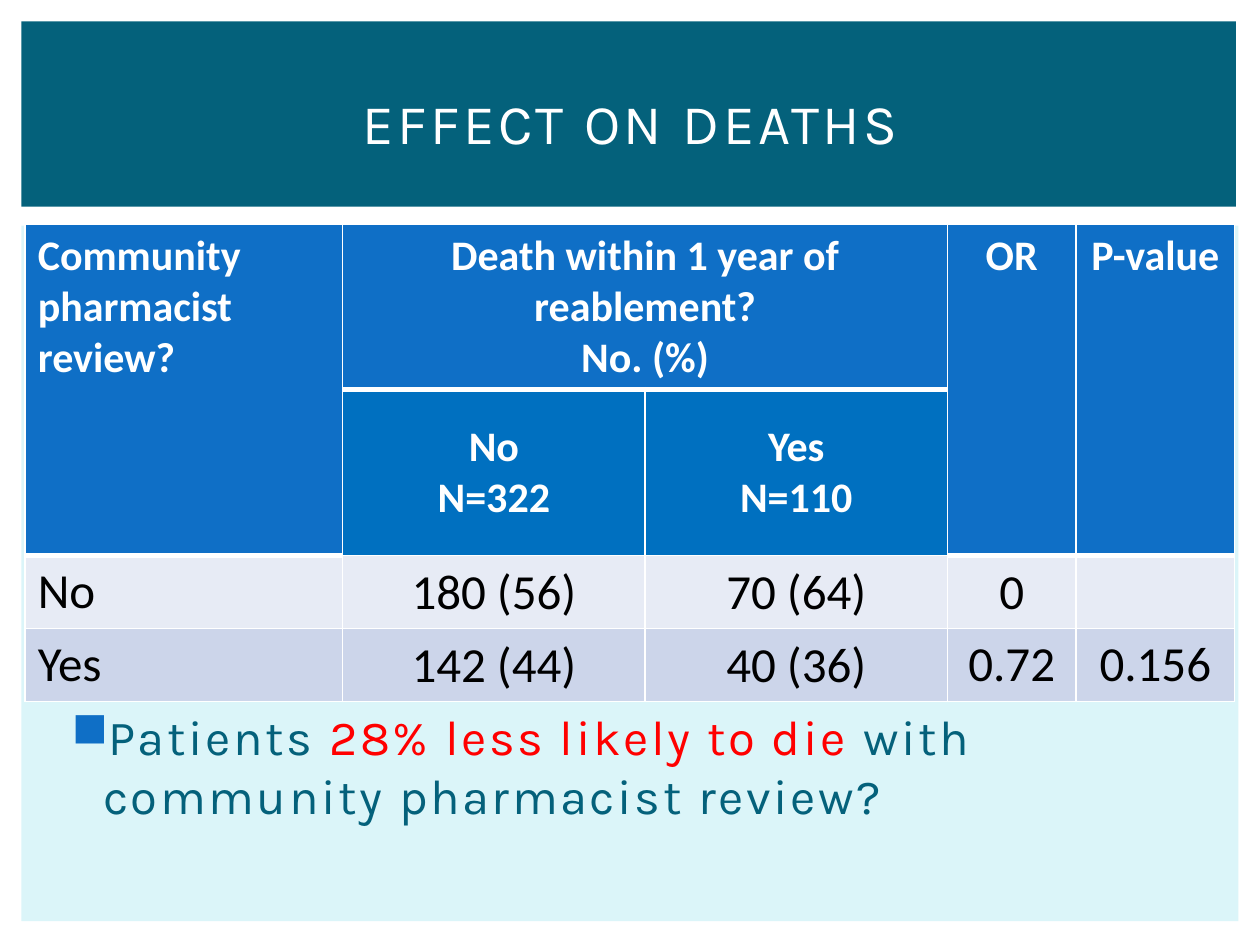
from dataclasses import dataclass

from lxml import etree
from pptx import Presentation
from pptx import util as u
from pptx.dml.color import RGBColor
from pptx.enum import shapes, text
from pptx.oxml.ns import qn

LEFT, CENTER = text.PP_ALIGN.LEFT, text.PP_ALIGN.CENTER
TOP, MIDDLE, BOTTOM = (text.MSO_ANCHOR.TOP, text.MSO_ANCHOR.MIDDLE,
                       text.MSO_ANCHOR.BOTTOM)


@dataclass(frozen=True)
class Theme:
    """Colours, fonts and type sizes of the slide."""
    teal: str = "04617B"
    pale: str = "DBF5F9"
    header: str = "0F6FC6"
    subheader: str = "0070C0"
    bands: tuple = ("E7EBF5", "CCD5EA")
    white: str = "FFFFFF"
    black: str = "000000"
    accent: str = "FF0000"
    display: str = "Karla"
    table: str = "Calibri"
    title_size: int = 32
    body_size: int = 28
    head_size: int = 24


T = Theme()


def write(tf, content, size, color, font, bold=False, align=LEFT, spacing=0):
    """Fill a text frame with paragraphs; each is a string or (text, colour) runs."""
    tf.word_wrap = True
    for i, runs in enumerate(content):
        p = tf.add_paragraph() if i else tf.paragraphs[0]
        p.alignment = align
        for words, tint in [(runs, color)] if isinstance(runs, str) else runs:
            r = p.add_run()
            r.text = words
            r.font.size, r.font.name, r.font.bold = u.Pt(size), font, bold
            r.font.color.rgb = RGBColor.from_string(tint)
            if spacing:
                r._r.get_or_add_rPr().set("spc", str(int(spacing * 100)))


def add_panel(s, box, color):
    """Draw a plain filled rectangle."""
    sp = s.shapes.add_shape(shapes.MSO_SHAPE.RECTANGLE, *map(u.Inches, box))
    sp.shadow.inherit = False
    sp.fill.solid()
    sp.fill.fore_color.rgb = RGBColor.from_string(color)
    sp.line.fill.background()


def add_title(s, box, words):
    """Draw the title band with its centred heading."""
    x, y, w, h = box
    add_panel(s, box, T.teal)
    tf = s.shapes.add_textbox(*map(u.Inches, (x + 0.25, y + 0.22, w - 0.47, h - 0.32))).text_frame
    tf.vertical_anchor = MIDDLE
    write(tf, [words], T.title_size, T.white, T.display, align=CENTER, spacing=2)


def add_bullet(s, box, runs):
    """Place one square-bulleted paragraph."""
    tf = s.shapes.add_textbox(*map(u.Inches, box)).text_frame
    write(tf, [runs], T.body_size, T.teal, T.display, spacing=1.5)
    pPr = tf.paragraphs[0]._p.get_or_add_pPr()
    pPr.set("marL", str(u.Inches(0.3)))
    pPr.set("indent", str(u.Inches(-0.25)))
    color = etree.SubElement(pPr, qn("a:buClr"))
    etree.SubElement(color, qn("a:srgbClr")).set("val", T.header)
    etree.SubElement(pPr, qn("a:buChar")).set("char", "■")


def set_borders(cell, bottom):
    """Give a cell white borders, with its own bottom weight in points."""
    tcPr = cell._tc.get_or_add_tcPr()
    for i, (side, weight) in enumerate(zip("LRTB", (1, 1, 1, bottom))):
        ln = etree.Element(qn(f"a:ln{side}"), w=str(u.Pt(weight)))
        fill = etree.SubElement(ln, qn("a:solidFill"))
        etree.SubElement(fill, qn("a:srgbClr")).set("val", T.white)
        tcPr.insert(i, ln)


def style_cell(cell, fill, bottom=1, anchor=TOP):
    """Set the fill, borders and vertical anchor of a cell."""
    cell.fill.solid()
    cell.fill.fore_color.rgb = RGBColor.from_string(fill)
    cell.vertical_anchor = anchor
    set_borders(cell, bottom)


def add_deaths_table(s, box, cols, rows, header, groups, data):
    """Build the table: a merged header, a row of groups and banded data rows."""
    frame = s.shapes.add_table(len(rows), len(cols), *map(u.Inches, box))
    table = frame.table
    for col, width in zip(table.columns, cols):
        col.width = u.Inches(width)
    for row, height in zip(table.rows, rows):
        row.height = u.Inches(height)

    head = dict(size=T.head_size, color=T.white, font=T.table, bold=True)
    for c in range(len(cols)):
        grouped = c in groups
        style_cell(table.cell(0, c), T.header, bottom=3)
        style_cell(table.cell(1, c), T.subheader if grouped else T.header,
                   bottom=1 if grouped else 3, anchor=MIDDLE if grouped else TOP)
        if c in header:
            write(table.cell(0, c).text_frame, header[c], align=CENTER if c else LEFT, **head)
        if grouped:
            write(table.cell(1, c).text_frame, groups[c], align=CENTER, **head)
        else:
            table.cell(0, c).merge(table.cell(1, c))
    table.cell(0, min(groups)).merge(table.cell(0, max(groups)))

    for r, (values, band) in enumerate(zip(data, T.bands), 2):
        for c, value in enumerate(values):
            cell = table.cell(r, c)
            style_cell(cell, band, anchor=BOTTOM if value == "0" else MIDDLE)
            if c in groups:
                cell.margin_left = cell.margin_right = cell.margin_top = u.Inches(0.01)
                cell.margin_bottom = 0
            if value:
                write(cell.text_frame, [value], T.body_size, T.black, T.table,
                      align=CENTER if c else LEFT)


def main():
    """Build and save the slide."""
    prs = Presentation()
    prs.slide_width, prs.slide_height = u.Inches(10), u.Inches(7.5)
    s = prs.slides.add_slide(prs.slide_layouts[6])
    add_panel(s, (0.17, 1.79, 9.66, 5.52), T.pale)
    add_title(s, (0.17, 0.17, 9.64, 1.47), "EFFECT ON DEATHS")
    add_bullet(s, (0.42, 5.56, 9.19, 1.14), [
        ("Patients ", T.teal),
        ("28% less likely to die ", T.accent),
        ("with community pharmacist review?", T.teal),
    ])
    add_deaths_table(
        s, (0.2, 1.78, 9.6, 3.79),
        cols=(2.52, 2.4, 2.4, 1.02, 1.26),
        rows=(1.31, 1.32, 0.58, 0.58),
        header={0: ["Community pharmacist review?"],
                1: ["Death within 1 year of reablement?", "No. (%)"],
                3: ["OR"], 4: ["P-value"]},
        groups={1: ["No", "N=322"], 2: ["Yes", "N=110"]},
        data=[("No", "180 (56)", "70 (64)", "0", ""),
              ("Yes", "142 (44)", "40 (36)", "0.72", "0.156")],
    )
    prs.save("out.pptx")


if __name__ == "__main__":
    main()
